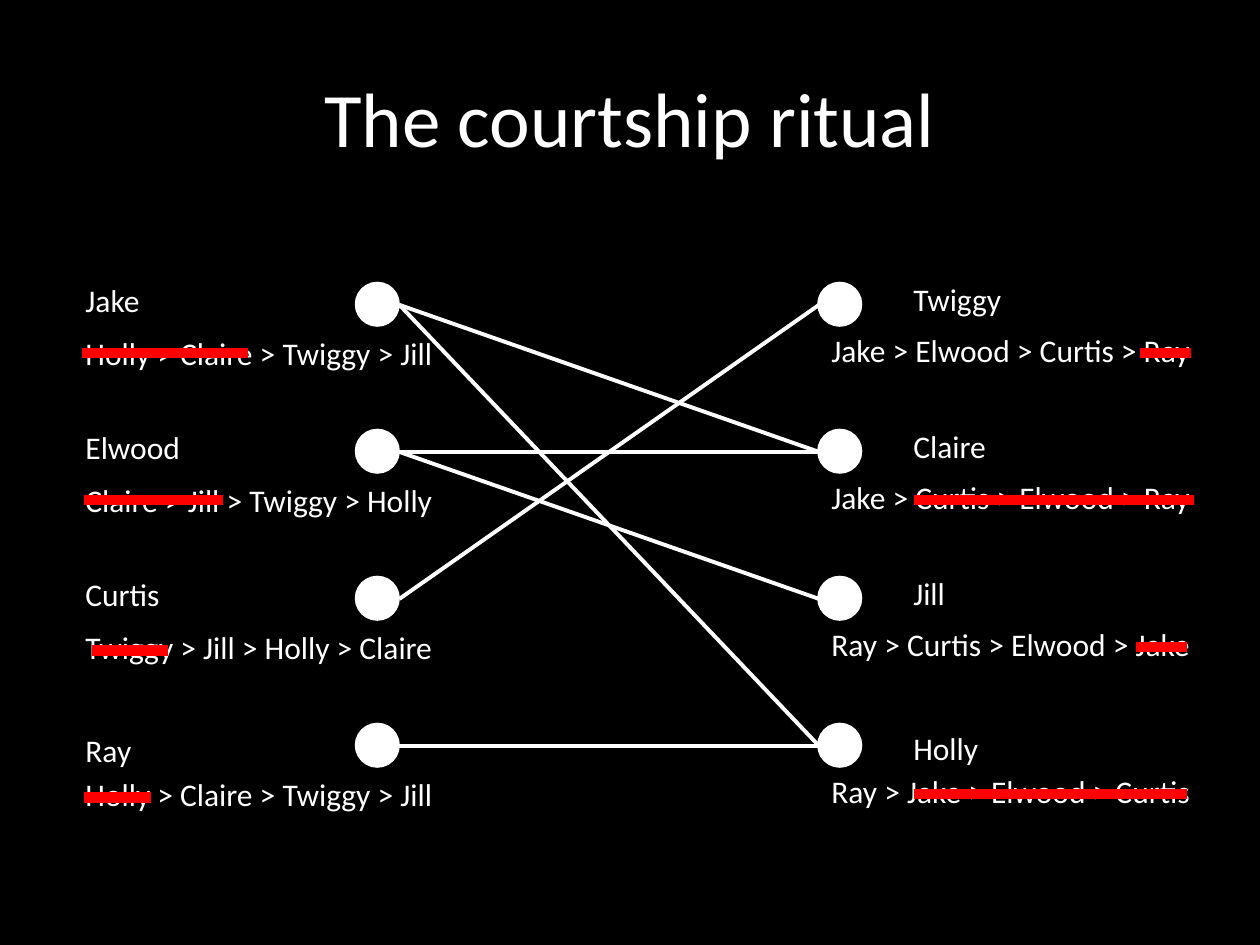
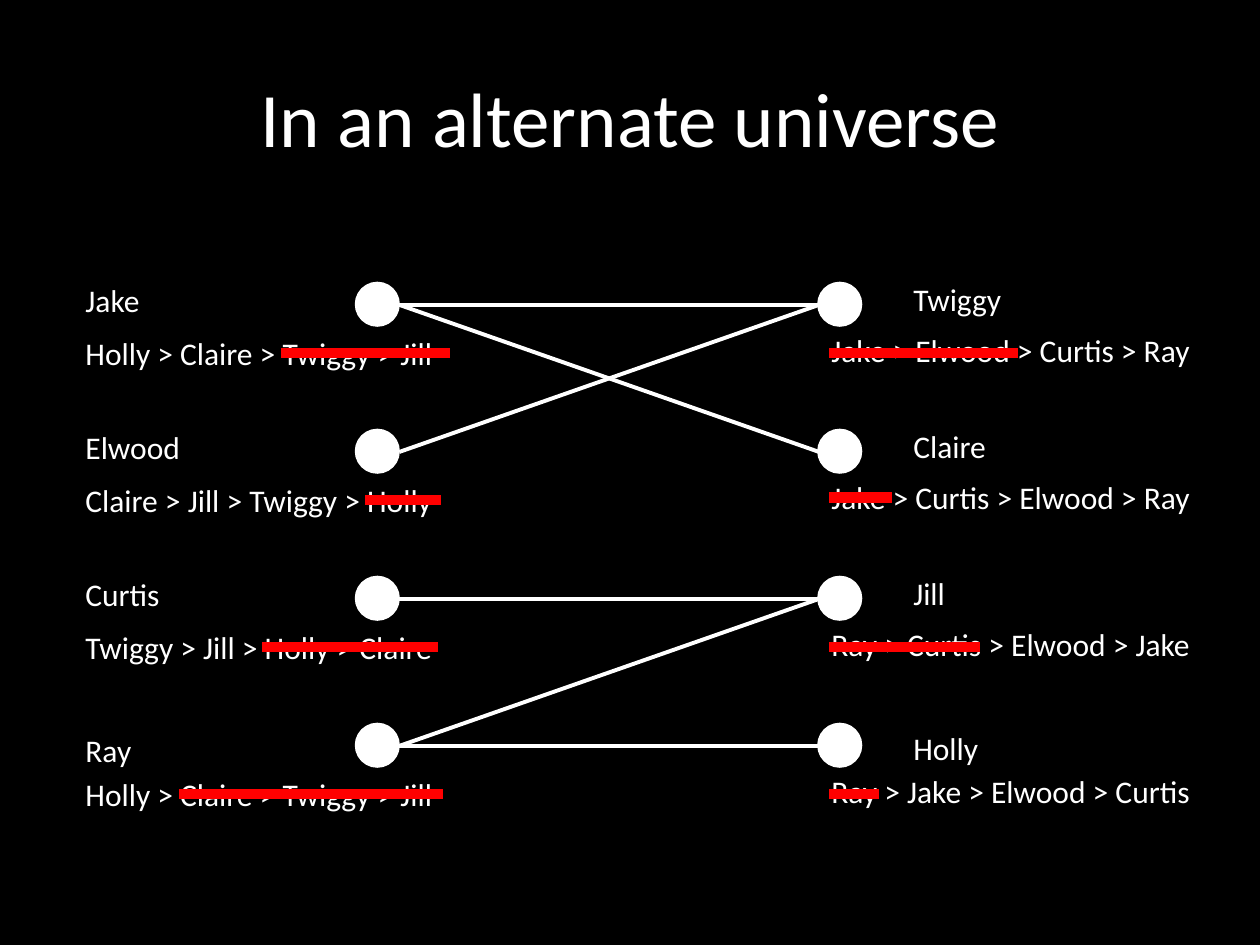
import pptx
import pptx.dml.color
import pptx.enum.shapes
import pptx.enum.text
import pptx.oxml
import pptx.oxml.ns
import pptx.util

Inches = pptx.util.Inches
Pt = pptx.util.Pt

ROW_STEP = 7 / 6
FIRST_CIRCLE_TOP = 2.25
CIRCLE_SIZE = 0.33
CIRCLE_LEFTS = (2.83, 6.5)
LINK_ENDS = (3.17, 6.5)
FIRST_LINK_Y = 2.42
FIRST_STRIKE_Y = 2.8
LAST_NAME_DROP = 0.07

SIDES = [
    {
        "name_at": (0.58, 2.18),
        "ranking_at": (0.58, 2.6),
        "ranking_width": 3,
        "people": [
            ("Jake", 0.64, "Holly > Claire > Twiggy > Jill"),
            ("Elwood", 0.96, "Claire > Jill > Twiggy > Holly"),
            ("Curtis", 0.8, "Twiggy > Jill > Holly > Claire"),
            ("Ray", 0.57, "Holly > Claire > Twiggy > Jill"),
        ],
    },
    {
        "name_at": (7.15, 2.17),
        "ranking_at": (6.5, 2.58),
        "ranking_width": 3.3,
        "people": [
            ("Twiggy", 0.91, "Jake > Elwood > Curtis > Ray"),
            ("Claire", 0.78, "Jake > Curtis > Elwood > Ray"),
            ("Jill", 0.46, "Ray > Curtis > Elwood > Jake"),
            ("Holly", 0.72, "Ray > Jake > Elwood > Curtis"),
        ],
    },
]

ROUNDS = [
    {
        "title": "The courtship ritual",
        "links": [(0, 3), (1, 1), (2, 0), (3, 3), (0, 1), (1, 2)],
        "strikes": [
            (3, 7.92, 9.42, 0), (1, 9.08, 9.48, 0), (0, 9.05, 9.45, 0),
            (3, 7.25, 9.25, 0), (0, 0.65, 1.18, 0), (1, 7.25, 9.25, 0),
            (1, 0.67, 1.27, 0), (2, 9.02, 9.42, 0), (2, 0.73, 1.33, 0.03),
            (3, 0.67, 1.2, 0.03), (0, 0.67, 1.97, 0), (1, 0.67, 1.77, 0),
        ],
    },
    {
        "title": "In an alternate universe",
        "links": [(0, 0), (0, 1), (3, 2), (3, 3), (1, 0), (2, 2)],
        "strikes": [
            (0, 3.17, 3.57, 0), (0, 6.58, 7.08, 0), (1, 2.9, 3.5, 0),
            (2, 6.58, 6.98, 0), (0, 2.23, 3.33, 0), (3, 1.42, 3.52, 0),
            (2, 2.08, 3.48, 0), (1, 6.58, 7.08, -0.02), (3, 6.58, 6.98, 0),
            (0, 6.58, 8.08, 0), (2, 6.58, 7.78, 0),
        ],
    },
]


def color(hex_value):
    return pptx.dml.color.RGBColor.from_string(hex_value)


def row_y(first, row):
    return first + row * ROW_STEP


def set_values(target, values):
    for name, value in values.items():
        setattr(target, name, value)


class SlideBuilder:
    background = "000000"
    ink = "FFFFFF"
    strike_ink = "FF0000"
    font = "Calibri"

    def __init__(self, deck):
        self.deck = deck
        self.page = None
        fill = deck.slide_master.background.fill
        fill.solid()
        fill.fore_color.rgb = color(self.background)

    def fill_text(self, shape, text, size, frame_format, alignment=None):
        frame = shape.text_frame
        set_values(frame, frame_format)
        para = frame.paragraphs[0]
        para.alignment = alignment
        span = para.add_run()
        span.text = text
        set_values(span.font, {"name": self.font, "size": Pt(size)})
        span.font.color.rgb = color(self.ink)

    def new_page(self, title):
        self.page = self.deck.slides.add_slide(self.deck.slide_layouts[5])
        box = self.page.shapes.title
        set_values(box, {"left": Inches(0.5), "top": Inches(0.3),
                         "width": Inches(9), "height": Inches(1.25)})
        self.fill_text(box, title, 44,
                       {"word_wrap": True,
                        "vertical_anchor": pptx.enum.text.MSO_ANCHOR.MIDDLE},
                       pptx.enum.text.PP_ALIGN.CENTER)

    def circle(self, left, top):
        shape = self.page.shapes.add_shape(
            pptx.enum.shapes.MSO_SHAPE.OVAL, Inches(left), Inches(top),
            Inches(CIRCLE_SIZE), Inches(CIRCLE_SIZE))
        shape.shadow.inherit = False
        shape.fill.solid()
        shape.fill.fore_color.rgb = color(self.ink)
        shape.line.color.rgb = color(self.ink)
        shape.line.width = Pt(2)

    def label(self, text, left, top, width, wrap):
        box = self.page.shapes.add_textbox(
            Inches(left), Inches(top), Inches(width), Inches(0.4))
        self.fill_text(box, text, 18,
                       {"word_wrap": wrap,
                        "auto_size": pptx.enum.text.MSO_AUTO_SIZE.SHAPE_TO_FIT_TEXT})

    def line(self, start, end, hex_value, weight):
        connector = self.page.shapes.add_connector(
            pptx.enum.shapes.MSO_CONNECTOR.STRAIGHT,
            *(Inches(value) for value in (*start, *end)))
        connector.line.color.rgb = color(hex_value)
        connector.line.width = Pt(weight)
        properties = connector._element.spPr
        properties.append(pptx.oxml.parse_xml(
            "<a:effectLst %s/>" % pptx.oxml.ns.nsdecls("a")))

    def link(self, left_row, right_row):
        start, end = [(x, row_y(FIRST_LINK_Y, row))
                      for x, row in zip(LINK_ENDS, (left_row, right_row))]
        self.line(start, end, self.ink, 2.25)

    def strike(self, row, start, end, shift):
        y = row_y(FIRST_STRIKE_Y, row) + shift
        self.line((start, y), (end, y), self.strike_ink, 6)

    def side(self, name_at, ranking_at, ranking_width, people):
        name_left, name_top = name_at
        ranking_left, ranking_top = ranking_at
        for row, (name, width, ranking) in enumerate(people):
            drop = LAST_NAME_DROP if row == len(people) - 1 else 0
            self.label(name, name_left, row_y(name_top, row) + drop, width, False)
            self.label(ranking, ranking_left, row_y(ranking_top, row), ranking_width, True)


def main():
    deck = pptx.Presentation()
    set_values(deck, {"slide_width": Inches(10), "slide_height": Inches(7.5)})
    builder = SlideBuilder(deck)
    for courtship in ROUNDS:
        builder.new_page(courtship["title"])
        for left, side in zip(CIRCLE_LEFTS, SIDES):
            for row in range(len(side["people"])):
                builder.circle(left, row_y(FIRST_CIRCLE_TOP, row))
            builder.side(**side)
        for link in courtship["links"]:
            builder.link(*link)
        for strike in courtship["strikes"]:
            builder.strike(*strike)
    deck.save("out.pptx")


if __name__ == "__main__":
    main()
